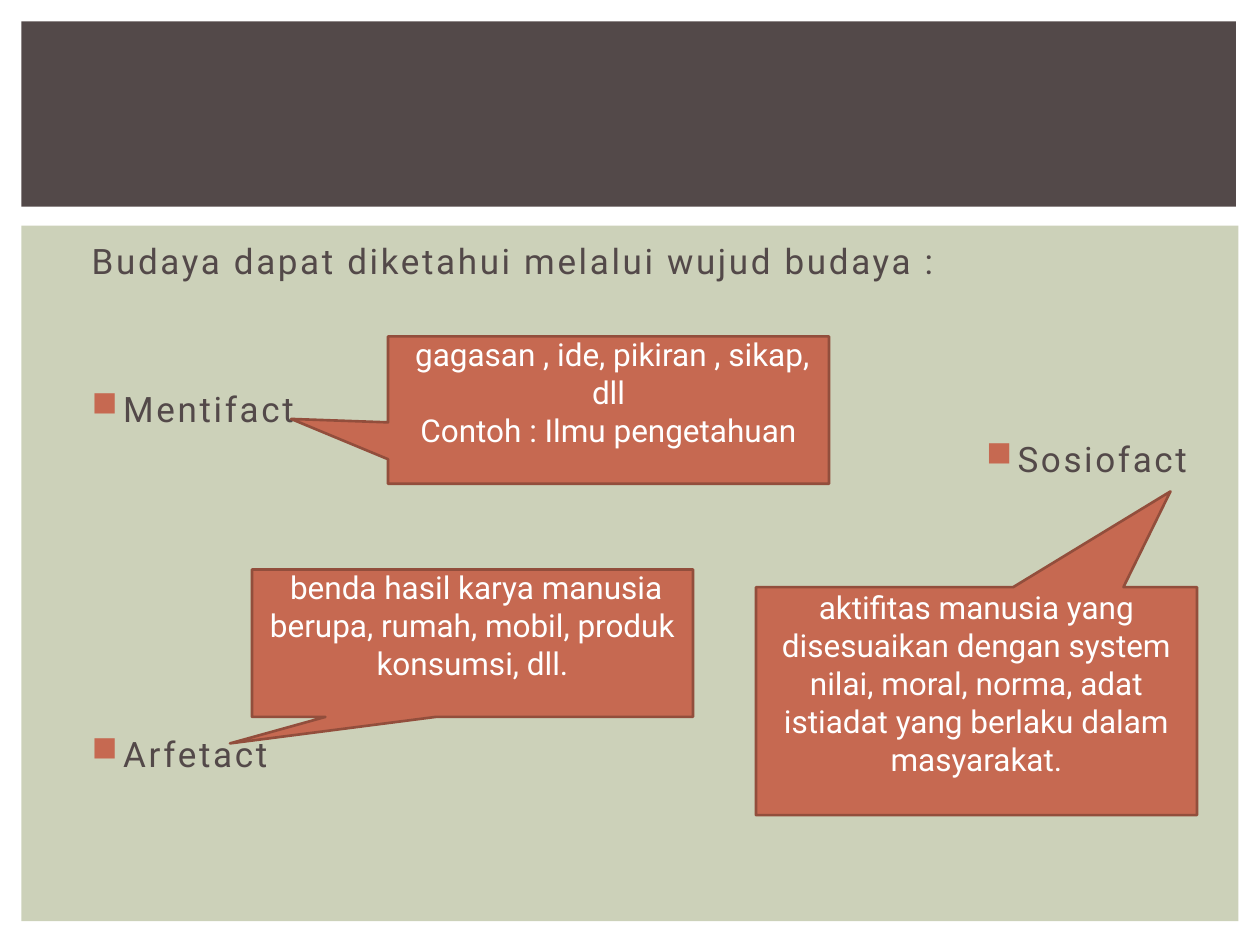
import pptx
import pptx.util
import pptx.dml.color
import pptx.enum.shapes
import pptx.enum.text
import lxml.etree
import pptx.oxml.ns

Inches, Pt = pptx.util.Inches, pptx.util.Pt
SHAPE = pptx.enum.shapes.MSO_SHAPE
ALIGN = pptx.enum.text.PP_ALIGN
qn = pptx.oxml.ns.qn


def color(hex_string):
    return pptx.dml.color.RGBColor.from_string(hex_string)


def add_block(kind, left, top, width, height, fill):
    block = slide.shapes.add_shape(kind, Inches(left), Inches(top), Inches(width), Inches(height))
    block.shadow.inherit = False
    block.fill.solid()
    block.fill.fore_color.rgb = color(fill)
    block.line.fill.background()
    return block


deck = pptx.Presentation()
deck.slide_width, deck.slide_height = Inches(10), Inches(7.5)
slide = deck.slides.add_slide(deck.slide_layouts[6])

add_block(SHAPE.RECTANGLE, 0.17, 1.79, 9.66, 5.52, "CCD1B9")
add_block(SHAPE.RECTANGLE, 0.17, 0.17, 9.64, 1.47, "534949")

body = slide.shapes.add_textbox(Inches(0.58), Inches(1.85), Inches(9.03), Inches(5.46)).text_frame
body.word_wrap = True
entries = [
    ("Budaya dapat diketahui melalui wujud budaya :", 0, ALIGN.LEFT, False),
    ("Mentifact", 60.6, ALIGN.LEFT, True),
    ("Sosiofact ", 4.6, ALIGN.RIGHT, True),
    ("Arfetact", 144.6, ALIGN.LEFT, True),
]
for index, (words, gap, align, bulleted) in enumerate(entries):
    entry = body.paragraphs[0] if index == 0 else body.add_paragraph()
    run = entry.add_run()
    run.text = words
    run.font._element.set("spc", "150")
    entry.alignment = align
    entry.space_before = Pt(gap)
    entry.font.name = "Roboto"
    entry.font.size = Pt(20)
    entry.font.color.rgb = color("534949")
    properties = entry._p.get_or_add_pPr()
    properties.set("marL", str(Inches(0.3 if bulleted else 0.05)))
    properties.set("indent", str(Inches(-0.25 if bulleted else 0)))
    if bulleted:
        bullet_color = lxml.etree.Element(qn("a:buClr"))
        lxml.etree.SubElement(bullet_color, qn("a:srgbClr"), val="C66951")
        bullet = lxml.etree.Element(qn("a:buChar"), char="■")
        properties.find(qn("a:spcBef")).addnext(bullet_color)
        bullet_color.addnext(bullet)

callouts = [
    (3.08, 2.67, 1.17, (-0.72, 0.06),
     [" gagasan , ide, pikiran , sikap, dll", "Contoh : Ilmu pengetahuan"]),
    (2, 4.52, 1.17, (-0.55, 0.68),
     [" benda hasil karya manusia berupa, rumah, mobil, produk konsumsi, dll."]),
    (6, 4.66, 1.81, (0.44, -0.92),
     ["aktifitas manusia yang disesuaikan dengan system nilai, moral, norma, "
      "adat istiadat yang berlaku dalam masyarakat."]),
]
for left, top, height, tip, lines in callouts:
    callout = add_block(SHAPE.RECTANGULAR_CALLOUT, left, top, 3.5, height, "C66951")
    callout.adjustments[0], callout.adjustments[1] = tip
    callout.line.color.rgb = color("924E3C")
    callout.line.width = Pt(1.5)
    frame = callout.text_frame
    frame.word_wrap = True
    frame.vertical_anchor = pptx.enum.text.MSO_ANCHOR.MIDDLE
    frame.margin_bottom = Inches(0.34)
    frame.text = "\n".join(lines)
    for paragraph in frame.paragraphs:
        paragraph.alignment = ALIGN.CENTER
        paragraph.font.name = "Roboto"
        paragraph.font.size = Pt(18)
        paragraph.font.color.rgb = color("FFFFFF")

deck.save("out.pptx")
